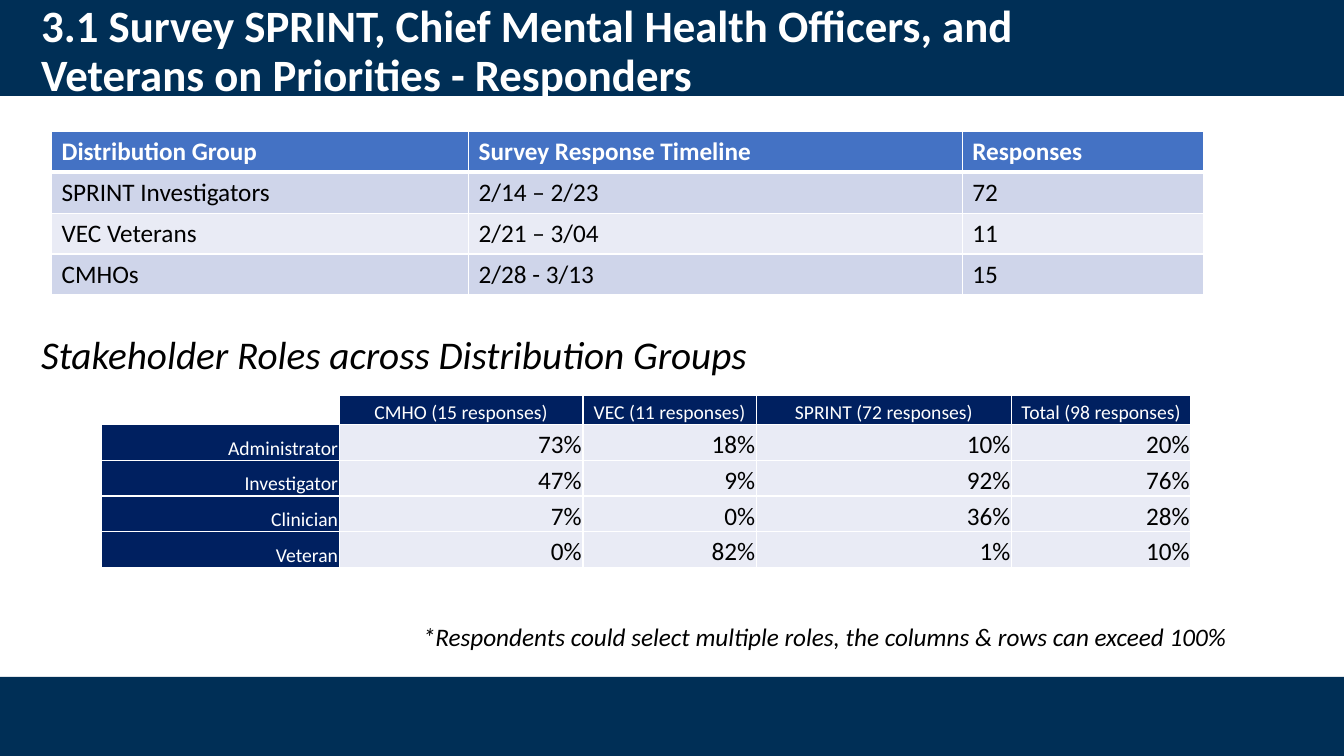
from lxml import etree
from pptx import Presentation
from pptx.dml.color import RGBColor
from pptx.enum.shapes import MSO_SHAPE
from pptx.enum.text import MSO_ANCHOR, PP_ALIGN
from pptx.oxml.ns import qn
from pptx.util import Cm, Pt

RECTANGLE = MSO_SHAPE.RECTANGLE
TOP, MIDDLE, BOTTOM = MSO_ANCHOR.TOP, MSO_ANCHOR.MIDDLE, MSO_ANCHOR.BOTTOM
LEFT, CENTER, RIGHT = PP_ALIGN.LEFT, PP_ALIGN.CENTER, PP_ALIGN.RIGHT

TITLE = ("3.1 Survey SPRINT, Chief Mental Health Officers, and "
         "Veterans on Priorities - Responders")
TIMELINE = [
    ("Distribution Group", "Survey Response Timeline", "Responses"),
    ("SPRINT Investigators", "2/14 – 2/23", "72"),
    ("VEC Veterans", "2/21 – 3/04", "11"),
    ("CMHOs", "2/28 - 3/13", "15"),
]
ROLES_HEADING = "Stakeholder Roles across Distribution Groups"
ROLES = [
    ("", "CMHO (15 responses)", "VEC (11 responses)",
     "SPRINT (72 responses)", "Total (98 responses)"),
    ("Administrator", "73%", "18%", "10%", "20%"),
    ("Investigator", "47%", "9%", "92%", "76%"),
    ("Clinician", "7%", "0%", "36%", "28%"),
    ("Veteran", "0%", "82%", "1%", "10%"),
]
FOOTNOTE = "*Respondents could select multiple roles, the columns & rows can exceed 100%"

THEME = {
    "font": "Calibri",
    "band": "002F56", "white": "FFFFFF", "black": "000000",
    "header": "4472C4", "stripe": "CFD5EA", "pale": "E9EBF5", "navy": "002060",
    "title": 32, "heading": 28, "body": 18, "label": 14,
}

SLIDE_WIDTH, SLIDE_HEIGHT = 33.87, 19.05
TITLE_BAND_HEIGHT = 2.42
FOOTER_TOP = 17.06
TEXT_LEFT, TEXT_WIDTH = 0.79, 29.21
TIMELINE_COLUMNS = (10.51, 12.44, 6.08)
ROLES_COLUMNS = (6, 6.14, 4.37, 6.43, 4.52)


def color(name):
    return RGBColor.from_string(THEME[name])


def format_text(frame, size, ink, align=LEFT, bold=False, italic=False):
    for paragraph in frame.paragraphs:
        paragraph.alignment = align
        for run in paragraph.runs:
            font = run.font
            font.name, font.size = THEME["font"], Pt(THEME[size])
            font.bold, font.italic = bold, italic
            font.color.rgb = color(ink)


def add_band(top, height):
    band = slide.shapes.add_shape(RECTANGLE, 0, Cm(top), Cm(SLIDE_WIDTH), Cm(height))
    band.shadow.inherit = False
    band.fill.solid()
    band.fill.fore_color.rgb = color("band")
    band.line.fill.background()


def add_text(text, left, top, height, size, ink, anchor=TOP, **style):
    box = slide.shapes.add_textbox(Cm(left), Cm(top), Cm(TEXT_WIDTH), Cm(height))
    frame = box.text_frame
    frame.word_wrap = True
    frame.vertical_anchor = anchor
    frame.text = text
    format_text(frame, size, ink, **style)
    return frame


def set_borders(cell, top=1, bottom=1):
    """Draw white cell borders; widths are in points."""
    properties = cell._tc.get_or_add_tcPr()
    for side, width in (("lnL", 1), ("lnR", 1), ("lnT", top), ("lnB", bottom)):
        line = etree.SubElement(properties, qn("a:" + side), w=str(Pt(width)))
        fill = etree.SubElement(line, qn("a:solidFill"))
        etree.SubElement(fill, qn("a:srgbClr"), val=THEME["white"])


def add_grid(rows, left, top, columns, heights, style_cell):
    """Add a table; style_cell(cell, row, column) formats each cell."""
    table = slide.shapes.add_table(
        len(rows), len(columns), Cm(left), Cm(top),
        Cm(sum(columns)), Cm(sum(heights))).table
    for column, width in zip(table.columns, columns):
        column.width = Cm(width)
    for row, height in zip(table.rows, heights):
        row.height = Cm(height)
    for r, values in enumerate(rows):
        for c, value in enumerate(values):
            cell = table.cell(r, c)
            cell.text_frame.text = value
            style_cell(cell, r, c)


def fill_cell(cell, fill):
    cell.fill.solid()
    cell.fill.fore_color.rgb = color(fill)


def style_timeline(cell, row, column):
    is_header = row == 0
    set_borders(cell, top=3 if row == 1 else 1, bottom=3 if is_header else 1)
    fill_cell(cell, "header" if is_header else "stripe" if row % 2 else "pale")
    format_text(cell.text_frame, "body", "white" if is_header else "black", bold=is_header)


def style_roles(cell, row, column):
    is_corner = row == column == 0
    is_label = row == 0 or column == 0
    set_borders(cell)
    fill_cell(cell, "white" if is_corner else "navy" if is_label else "pale")
    cell.vertical_anchor = BOTTOM
    cell.margin_left = cell.margin_right = cell.margin_top = Cm(0.03)
    cell.margin_bottom = 0
    format_text(cell.text_frame, "label" if is_label else "body",
                "white" if is_label else "black", CENTER if row == 0 else RIGHT)
    if is_corner:  # keeps the empty cell from stretching its row
        end = cell.text_frame.paragraphs[0]._p.get_or_add_endParaRPr()
        end.set("sz", str(THEME["label"] * 100))


presentation = Presentation()
presentation.slide_width, presentation.slide_height = Cm(SLIDE_WIDTH), Cm(SLIDE_HEIGHT)
slide = presentation.slides.add_slide(presentation.slide_layouts[6])

add_band(0, TITLE_BAND_HEIGHT)
add_band(FOOTER_TOP, SLIDE_HEIGHT - FOOTER_TOP)

title = add_text(TITLE, TEXT_LEFT, 0.46, 1.73, "title", "white", MIDDLE, bold=True)
title.paragraphs[0].line_spacing = 0.9

add_grid(TIMELINE, 1.3, 3.31, TIMELINE_COLUMNS, [1.03] * len(TIMELINE), style_timeline)
add_text(ROLES_HEADING, TEXT_LEFT, 8.2, 1.45, "heading", "black", italic=True)
add_grid(ROLES, 2.55, 9.96, ROLES_COLUMNS,
         [0.74] + [0.9] * (len(ROLES) - 1), style_roles)
add_text(FOOTNOTE, 1.95, 15.52, 1.03, "body", "black", align=RIGHT, italic=True)

presentation.save("out.pptx")
